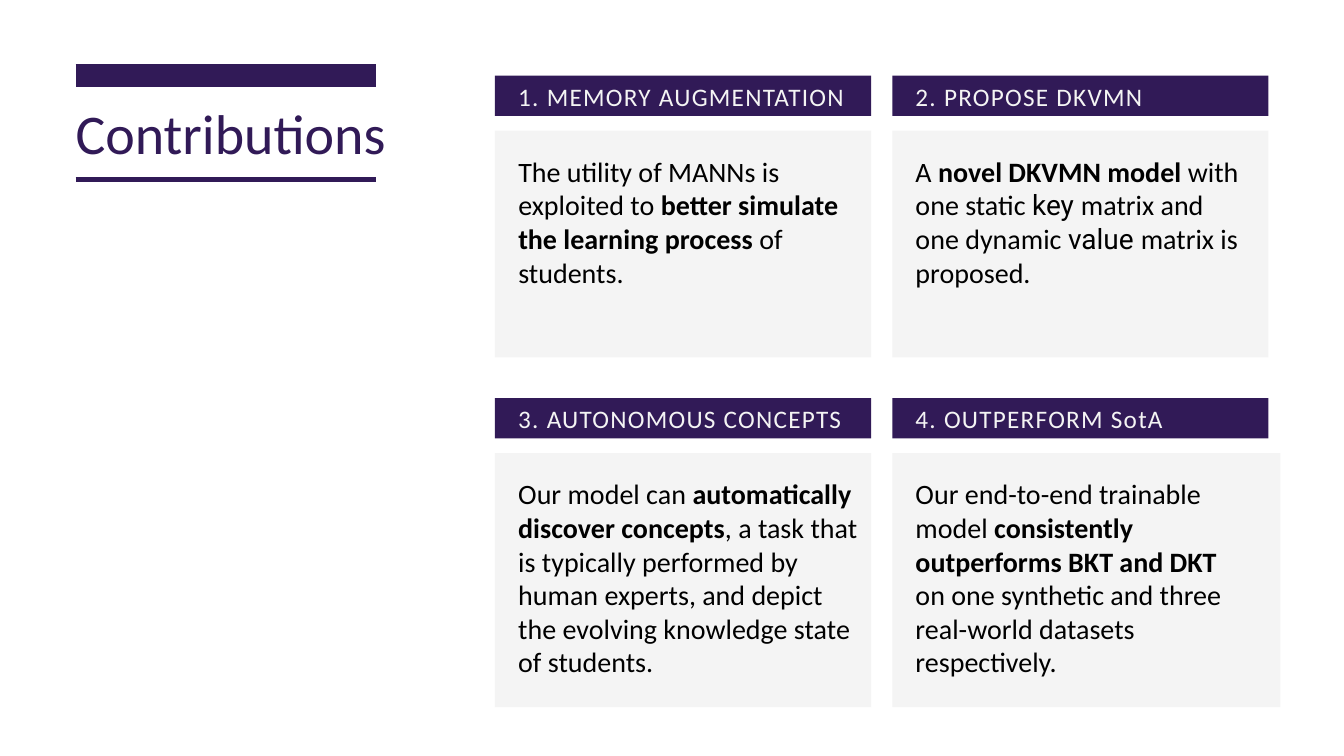
from pptx import Presentation
from pptx.dml.color import RGBColor
from pptx.enum.shapes import MSO_CONNECTOR, MSO_SHAPE
from pptx.enum.text import MSO_AUTO_SIZE
from pptx.oxml.ns import qn
from pptx.util import Inches, Pt
from lxml.etree import SubElement

COLORS = {"purple": "311A57", "pale": "F4F4F4", "black": "000000"}
TITLE = {"size": Pt(40), "name": "Calibri"}
HEAD = {"size": Pt(18), "name": "Calibri"}
BODY = {"size": Pt(20), "name": "Calibri", "bold": False}
BOLD = {"bold": True}
TERM = {"name": "Roboto"}
FRAME = {
    "margin_left": 0, "margin_top": 0, "margin_right": 0, "margin_bottom": 0,
    "word_wrap": True, "auto_size": MSO_AUTO_SIZE.SHAPE_TO_FIT_TEXT,
}
COLS = (4.91, 8.85)
ROWS = (0.75, 3.95)
INSET = 0.23
WIDTH = 3.73

CARDS = [
    {"head": "1. MEMORY AUGMENTATION", "col": 0, "row": 0,
     "size": (WIDTH, 2.25), "text": (3.25, 1.35),
     "runs": [("The utility of MANNs is exploited to ", {}),
              ("better simulate the learning process ", BOLD),
              ("of students.", {})]},
    {"head": "2. PROPOSE DKVMN", "col": 1, "row": 0,
     "size": (WIDTH, 2.25), "text": (3.25, 1.35),
     "runs": [("A ", {}), ("novel DKVMN model ", BOLD),
              ("with one static ", {}), ("key ", TERM),
              ("matrix and one dynamic ", {}), ("value ", TERM),
              ("matrix is proposed.", {})]},
    {"head": "3. AUTONOMOUS CONCEPTS", "col": 0, "row": 1,
     "size": (WIDTH, 2.52), "text": (3.4, 2.02),
     "runs": [("Our model can ", {}),
              ("automatically discover concepts", BOLD),
              (", a task that is typically performed by human experts, "
               "and depict the evolving knowledge state of students.", {})]},
    {"head": "4. OUTPERFORM SotA", "col": 1, "row": 1,
     "size": (3.85, 2.52), "text": (3.25, 2.02),
     "runs": [("Our end-to-end trainable model ", {}),
              ("consistently outperforms BKT and DKT ", BOLD),
              ("on one synthetic and three real-world datasets "
               "respectively.", {})]},
]


def apply(target, values):
    for name, value in values.items():
        setattr(target, name, value)


def color(name):
    return RGBColor.from_string(COLORS[name])


def add_rule(slide, top, weight):
    rule = slide.shapes.add_connector(
        MSO_CONNECTOR.STRAIGHT, Inches(0.75), Inches(top),
        Inches(3.73), Inches(top))
    rule.line.color.rgb = color("purple")
    rule.line.width = Pt(weight)
    SubElement(rule._element.spPr, qn("a:effectLst"))


def add_box(slide, left, top, width, height, fill):
    box = slide.shapes.add_shape(
        MSO_SHAPE.RECTANGLE, Inches(left), Inches(top),
        Inches(width), Inches(height))
    box.shadow.inherit = False
    box.fill.solid()
    box.fill.fore_color.rgb = color(fill)
    box.line.fill.background()


def add_text(slide, left, top, width, height, runs, font, ink, para, track=0):
    box = slide.shapes.add_textbox(
        Inches(left), Inches(top), Inches(width), Inches(height))
    apply(box.text_frame, FRAME)
    line = box.text_frame.paragraphs[0]
    apply(line, para)
    for text, style in runs:
        run = line.add_run()
        run.text = text
        apply(run.font, {**font, **style})
        run.font.color.rgb = color(ink)
        if track:
            run._r.get_or_add_rPr().set("spc", str(track))


def add_card(slide, card):
    left, top = COLS[card["col"]], ROWS[card["row"]]
    inner = left + INSET
    add_box(slide, left, top, WIDTH, 0.4, "purple")
    add_text(slide, inner, top + 0.07, 3.4, 0.29, [(card["head"], {})],
             HEAD, "pale", {"line_spacing": Pt(20.5)}, 90)
    add_box(slide, left, top + 0.545, *card["size"], "pale")
    add_text(slide, inner, top + 0.78, *card["text"], card["runs"],
             BODY, "black", {"space_after": Pt(12)})


def main():
    deck = Presentation()
    apply(deck, {"slide_width": Inches(13.33), "slide_height": Inches(7.5)})
    slide = deck.slides.add_slide(deck.slide_layouts[6])
    add_rule(slide, 0.75, 16)
    add_text(slide, 0.75, 1.01, 3.74, 0.63, [("Contributions", {})],
             TITLE, "purple", {"line_spacing": Pt(45.4)})
    add_rule(slide, 1.78, 3)
    for card in CARDS:
        add_card(slide, card)
    deck.save("out.pptx")


if __name__ == "__main__":
    main()
